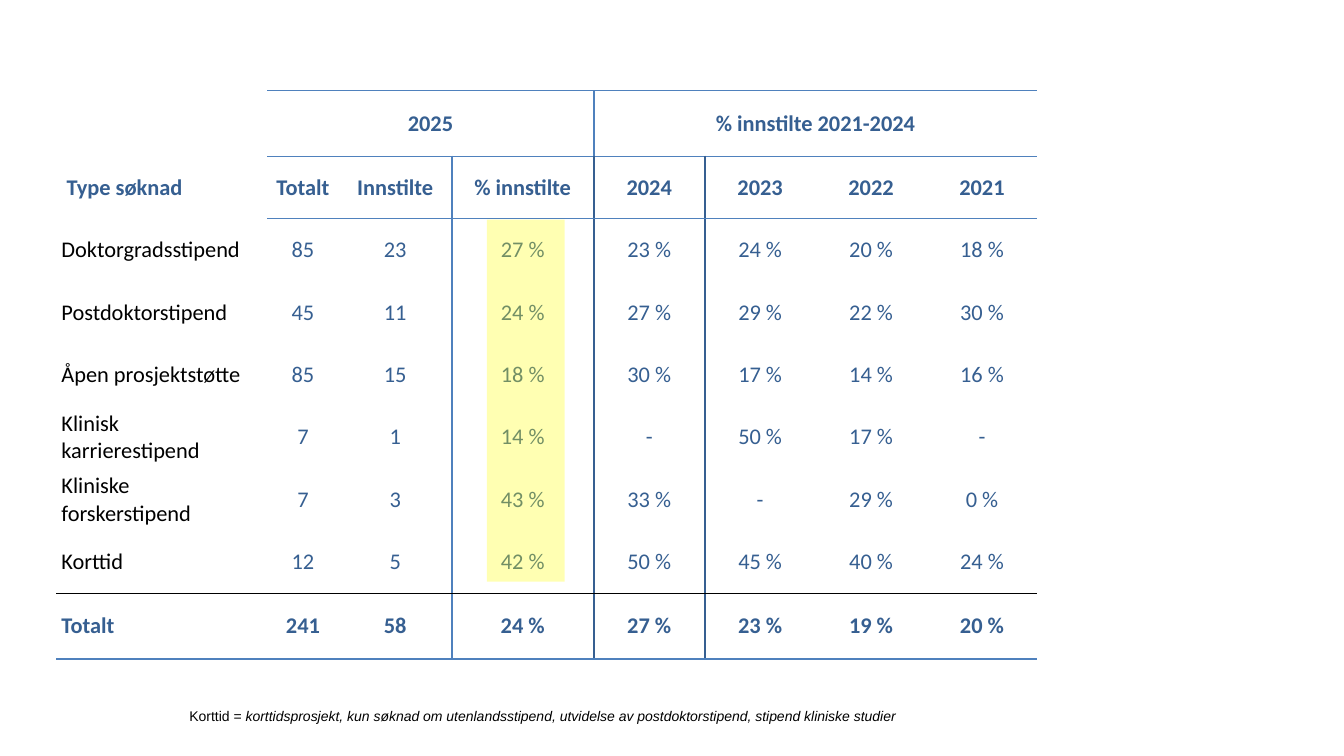
from dataclasses import dataclass
from itertools import product
from lxml.etree import SubElement as Sub
from pptx import Presentation
from pptx.dml.color import RGBColor as Rgb
from pptx.enum.shapes import MSO_SHAPE as Shape
from pptx.enum.text import MSO_ANCHOR as Anchor, MSO_AUTO_SIZE as Auto, PP_ALIGN as Align
from pptx.oxml.ns import qn
from pptx.util import Emu, Pt

ROWS = [
    ("", "2025", "", "", "% innstilte 2021-2024", "", "", ""),
    ("Type søknad", "Totalt", "Innstilte", "% innstilte", "2024", "2023", "2022", "2021"),
    ("Doktorgradsstipend", "85", "23", "27 %", "23 %", "24 %", "20 %", "18 %"),
    ("Postdoktorstipend", "45", "11", "24 %", "27 %", "29 %", "22 %", "30 %"),
    ("Åpen prosjektstøtte", "85", "15", "18 %", "30 %", "17 %", "14 %", "16 %"),
    ("Klinisk karrierestipend", "7", "1", "14 %", "-", "50 %", "17 %", "-"),
    ("Kliniske forskerstipend", "7", "3", "43 %", "33 %", "-", "29 %", "0 %"),
    ("Korttid", "12", "5", "42 %", "50 %", "45 %", "40 %", "24 %"),
    ("Totalt", "241", "58", "24 %", "27 %", "23 %", "19 %", "20 %"),
]
NOTE = [
    ("Korttid = ", False),
    ("korttidsprosjekt, kun søknad om utenlandsstipend, utvidelse av "
     "postdoktorstipend, stipend kliniske studier", True),
]


@dataclass(frozen=True)
class Theme:
    ink: str = "000000"
    text: str = "365F91"
    rule: str = "4F81BD"
    mark: str = "FFFF00"
    alpha: int = 30
    body: int = 16
    small: int = 10
    thin: float = 1
    thick: float = 1.5
    face: str = "Calibri"
    plain: str = "Arial"


T = Theme()
WIDTHS = [209, 71, 112, 141] + [110] * 4
HEIGHTS = [65] + [62] * 7 + [65]
LAST = len(ROWS) - 1
SPANS = [(1, 3), (4, 7)]
ACROSS = {0: (1, T.rule), 1: (1, T.rule), LAST: (0, T.ink), LAST + 1: (0, T.rule)}
DOWN = [(3, 1, LAST, T.rule), (4, 0, 0, T.rule), (4, 1, LAST, T.text)]


def px(n):
    return Emu(n * 9144)


def put(item, **vals):
    for name, val in vals.items():
        setattr(item, name, val)


def style(font, hue, **vals):
    put(font, **vals)
    font.color.rgb = Rgb.from_string(hue)


def edges(row, col):
    for side, y in (("T", row), ("B", row + 1)):
        if y in ACROSS and col >= ACROSS[y][0]:
            yield side, ACROSS[y][1], T.thin
    for x, top, end, hue in DOWN:
        if top <= row <= end and col in (x, x - 1):
            yield "L" if col == x else "R", hue, T.thick


def border(cell, lines):
    props = cell._tc.get_or_add_tcPr()
    for side, hue, size in sorted(lines, key=lambda line: "LRTB".index(line[0])):
        line = Sub(props, qn("a:ln" + side), w=str(Pt(size)))
        Sub(Sub(line, qn("a:solidFill")), qn("a:srgbClr"), val=hue)


def fill(cell, row, col):
    name = col == 0
    put(cell, text=ROWS[row][col], vertical_anchor=Anchor.MIDDLE,
        margin_left=px(10 if name and row == 1 else 5), margin_right=px(5),
        margin_top=0, margin_bottom=0)
    border(cell, edges(row, col))
    cell.fill.background()
    para = cell.text_frame.paragraphs[0]
    para.alignment = Align.LEFT if name else Align.CENTER
    inner = 1 < row < LAST
    style(para.font, T.ink if name and inner else T.text,
          name=T.face, size=Pt(T.body), bold=not inner)


def grid(slide):
    frame = slide.shapes.add_table(len(ROWS), len(WIDTHS), px(56), px(90),
                                   px(sum(WIDTHS)), px(sum(HEIGHTS)))
    table = frame.table
    put(table, first_row=False, horz_banding=False)
    table._tbl.tblPr.find(qn("a:tableStyleId")).text = "{2D5ABB26-0587-4C30-8999-92F81FD0307C}"
    for col, wide in zip(table.columns, WIDTHS):
        col.width = px(wide)
    for row, high in zip(table.rows, HEIGHTS):
        row.height = px(high)
    for row, col in product(range(len(ROWS)), range(len(WIDTHS))):
        fill(table.cell(row, col), row, col)
    for start, end in SPANS:
        table.cell(0, start).merge(table.cell(0, end))


def note(slide):
    frame = slide.shapes.add_textbox(px(178), px(697), px(721), px(27)).text_frame
    put(frame, word_wrap=False, auto_size=Auto.SHAPE_TO_FIT_TEXT,
        vertical_anchor=Anchor.MIDDLE)
    for text, slant in NOTE:
        run = frame.paragraphs[0].add_run()
        run.text = text
        style(run.font, T.ink, name=T.plain, size=Pt(T.small), italic=slant)


def mark(slide):
    box = slide.shapes.add_shape(Shape.RECTANGLE, px(483), px(218), px(77), px(359))
    box.shadow.inherit = False
    box.line.fill.background()
    box.fill.solid()
    box.fill.fore_color.rgb = Rgb.from_string(T.mark)
    hue = box._element.spPr.find(qn("a:solidFill"))[0]
    Sub(hue, qn("a:alpha"), val=str(T.alpha * 1000))


def main():
    deck = Presentation()
    put(deck, slide_width=px(1333), slide_height=px(750))
    slide = deck.slides.add_slide(deck.slide_layouts[6])
    for draw in (note, grid, mark):
        draw(slide)
    deck.save("out.pptx")


if __name__ == "__main__":
    main()
